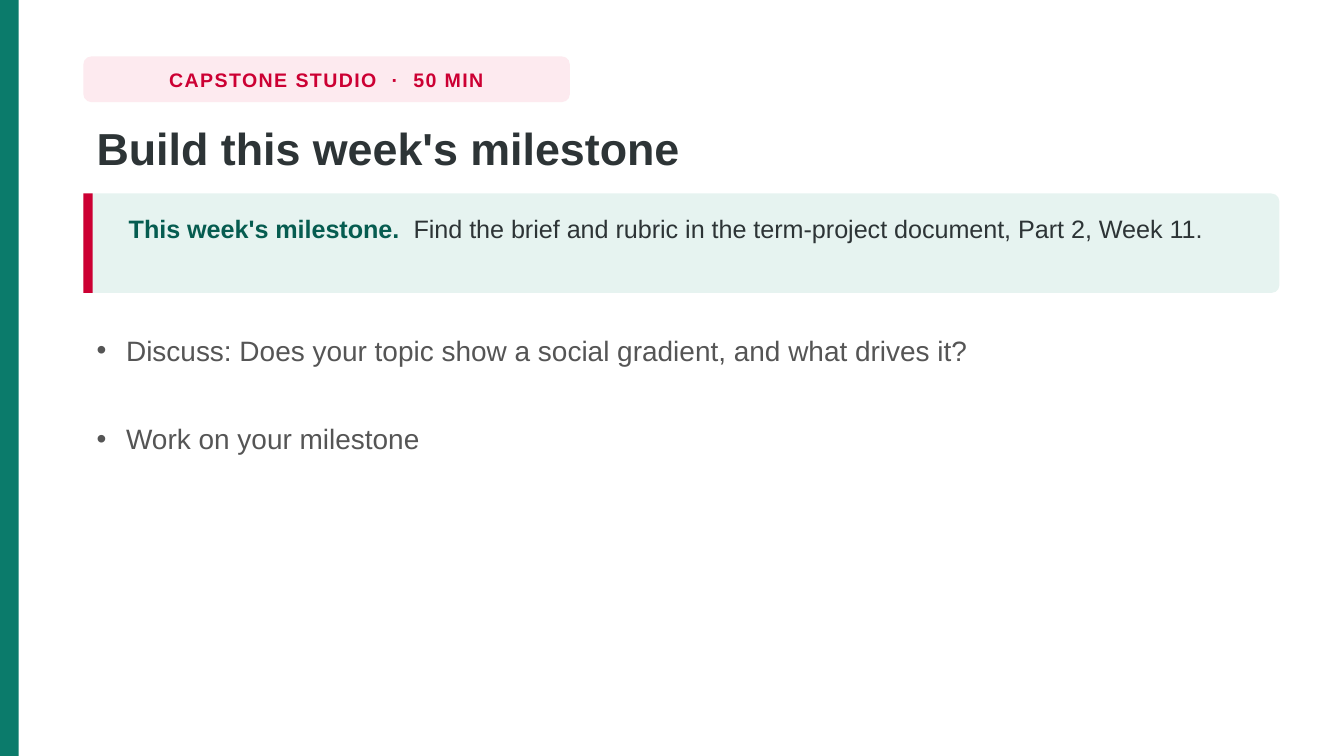
from dataclasses import dataclass

from lxml.etree import SubElement
from pptx import Presentation
from pptx.dml.color import RGBColor
from pptx.enum.shapes import MSO_SHAPE
from pptx.enum.text import MSO_ANCHOR, PP_ALIGN
from pptx.oxml.ns import qn
from pptx.slide import Slide
from pptx.text.text import TextFrame, _Paragraph
from pptx.util import Inches, Pt

FONT = "Arial"
GREEN, DARK_GREEN, PALE_GREEN = "0B7B6B", "065C50", "E6F3F0"
RED, PALE_RED = "CC0033", "FDEAEF"
INK, GREY = "2D3436", "555555"
SLIDE_WIDTH = 10
SLIDE_HEIGHT = SLIDE_WIDTH * 9 / 16
LEFT, WIDTH = 0.62, 8.9
CORNER = 0.06


@dataclass(frozen=True)
class Box:
    left: float
    top: float
    width: float
    height: float

    def lengths(self) -> list[Inches]:
        return [Inches(v) for v in (self.left, self.top, self.width, self.height)]


@dataclass(frozen=True)
class Bullet:
    text: str
    top: float
    height: float


TAG = Box(LEFT, 0.42, 3.62, 0.34)
CALLOUT = Box(LEFT, 1.44, WIDTH, 0.74)
BULLETS = [
    Bullet("Discuss: Does your topic show a social gradient, and what drives it?", 2.4, 0.58),
    Bullet("Work on your milestone", 3.06, 0.31),
]


def color(value: str) -> RGBColor:
    return RGBColor.from_string(value)


def add_panel(s: Slide, box: Box, fill: str, radius: float = 0) -> None:
    kind = MSO_SHAPE.ROUNDED_RECTANGLE if radius else MSO_SHAPE.RECTANGLE
    sp = s.shapes.add_shape(kind, *box.lengths())
    if radius:
        sp.adjustments[0] = radius / box.height
    sp.shadow.inherit = False
    sp.fill.solid()
    sp.fill.fore_color.rgb = color(fill)
    sp.line.fill.background()


def add_text_box(s: Slide, box: Box, wrap: bool = True) -> TextFrame:
    tf = s.shapes.add_textbox(*box.lengths()).text_frame
    tf.word_wrap = wrap
    return tf


def add_run(p: _Paragraph, text: str, *, size: float, fill: str,
            bold: bool = False, tracking: float = 0) -> None:
    r = p.add_run()
    r.text = text
    r.font.name = FONT
    r.font.size = Pt(size)
    r.font.bold = bold
    r.font.color.rgb = color(fill)
    if tracking:
        r.font._element.set("spc", str(round(tracking * 100)))


def add_bullet(s: Slide, bullet: Bullet) -> None:
    tf = add_text_box(s, Box(LEFT, bullet.top, WIDTH, bullet.height))
    p = tf.paragraphs[0]
    p.line_spacing = 1.12
    pPr = p._p.get_or_add_pPr()
    pPr.set("marL", str(Inches(0.22)))
    pPr.set("indent", str(Inches(-0.22)))
    SubElement(pPr, qn("a:buFont"), typeface=FONT)
    SubElement(pPr, qn("a:buChar"), char="•")
    add_run(p, bullet.text, size=15, fill=GREY)


def add_tag(s: Slide) -> None:
    add_panel(s, TAG, PALE_RED, CORNER)
    tf = add_text_box(s, TAG, wrap=False)
    tf.vertical_anchor = MSO_ANCHOR.MIDDLE
    p = tf.paragraphs[0]
    p.alignment = PP_ALIGN.CENTER
    add_run(p, "CAPSTONE STUDIO  ·  50 MIN", size=10.5, fill=RED, bold=True, tracking=0.8)


def add_title(s: Slide) -> None:
    p = add_text_box(s, Box(LEFT, 0.84, WIDTH, 0.56)).paragraphs[0]
    p.line_spacing = 1.02
    add_run(p, "Build this week's milestone", size=24, fill=INK, bold=True)


def add_callout(s: Slide) -> None:
    add_panel(s, CALLOUT, PALE_GREEN, CORNER)
    add_panel(s, Box(LEFT, CALLOUT.top, 0.07, CALLOUT.height), RED)
    p = add_text_box(s, Box(0.86, 1.51, 8.4, 0.6)).paragraphs[0]
    p.line_spacing = 1.14
    add_run(p, "This week's milestone.  ", size=13.5, fill=DARK_GREEN, bold=True)
    add_run(p, "Find the brief and rubric in the term-project document, Part 2, Week 11.",
            size=13.5, fill=INK)


def main() -> None:
    prs = Presentation()
    prs.slide_width, prs.slide_height = Inches(SLIDE_WIDTH), Inches(SLIDE_HEIGHT)
    s = prs.slides.add_slide(prs.slide_layouts[6])
    add_panel(s, Box(0, 0, 0.14, SLIDE_HEIGHT), GREEN)
    add_tag(s)
    add_title(s)
    add_callout(s)
    for bullet in BULLETS:
        add_bullet(s, bullet)
    prs.save("out.pptx")


if __name__ == "__main__":
    main()
